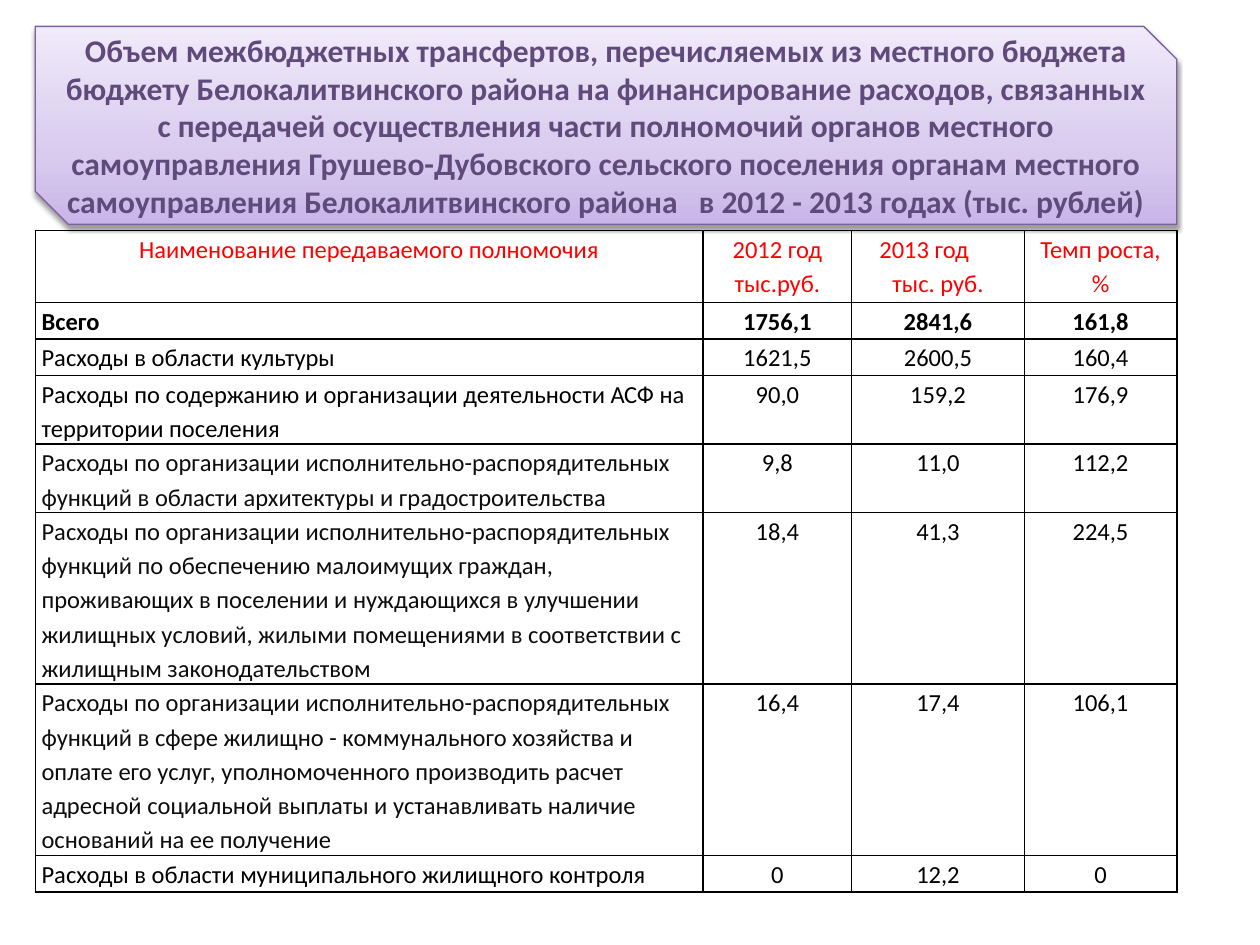
from lxml import etree
from pptx import Presentation
from pptx.dml.color import RGBColor
from pptx.enum.shapes import MSO_SHAPE
from pptx.enum.text import MSO_ANCHOR, PP_ALIGN
from pptx.oxml import parse_xml
from pptx.oxml.ns import qn
from pptx.util import Inches, Pt

BANNER = MSO_SHAPE.SNIP_2_DIAG_RECTANGLE
MIDDLE = MSO_ANCHOR.MIDDLE
LEFT, CENTER = PP_ALIGN.LEFT, PP_ALIGN.CENTER
NAMESPACE = 'xmlns:a="http://schemas.openxmlformats.org/drawingml/2006/main"'
RED, BLACK, DARK, PURPLE = "FF0000", "000000", "0D0D0D", "604A7B"
LEFT_EDGE, WIDTH = 0.28, 9.06


def color(value):
    return RGBColor.from_string(value)


def add_text(paragraph, text, size, text_color, bold, align):
    paragraph.alignment = align
    run = paragraph.add_run()
    run.text = text
    run.font.name = "Calibri"
    run.font.size = Pt(size)
    run.font.bold = bold
    run.font.color.rgb = color(text_color)


presentation = Presentation()
presentation.slide_width = Inches(10)
presentation.slide_height = Inches(7.5)
slide = presentation.slides.add_slide(presentation.slide_layouts[6])

# Table of transferred powers: name, 2012, 2013, growth
column_widths = [5.3, 1.18, 1.37, 1.21]
row_heights = [0.57, 0.29, 0.29, 0.47, 0.47, 1.19, 1.19, 0.29]
rows = [
    ("Наименование передаваемого полномочия", "2012 год тыс.руб.",
     "2013 год      тыс. руб.", "Темп роста, %"),
    ("Всего", "1756,1", "2841,6", "161,8"),
    ("Расходы в области культуры", "1621,5", "2600,5", "160,4"),
    ("Расходы по содержанию и организации деятельности АСФ на территории поселения",
     "90,0", "159,2", "176,9"),
    ("Расходы по организации исполнительно-распорядительных функций в области "
     "архитектуры и градостроительства", "9,8", "11,0", "112,2"),
    ("Расходы по организации исполнительно-распорядительных функций по обеспечению "
     "малоимущих граждан, проживающих в поселении и нуждающихся в улучшении жилищных "
     "условий, жилыми помещениями в соответствии с жилищным законодательством",
     "18,4", "41,3", "224,5"),
    ("Расходы по организации исполнительно-распорядительных функций в сфере жилищно - "
     "коммунального хозяйства и оплате его услуг, уполномоченного производить расчет "
     "адресной социальной выплаты и устанавливать наличие оснований на ее получение",
     "16,4", "17,4", "106,1"),
    ("Расходы в области муниципального жилищного контроля", "0", "12,2", "0"),
]
HEADER_ROW, TOTAL_ROW, DARK_ROWS = 0, 1, (4, 5, 6)

table = slide.shapes.add_table(
    len(rows), len(column_widths), Inches(LEFT_EDGE), Inches(1.83),
    Inches(WIDTH), Inches(sum(row_heights))).table
table.first_row = False
table.horz_banding = False
for column, width in zip(table.columns, column_widths):
    column.width = Inches(width)
for row, height in zip(table.rows, row_heights):
    row.height = Inches(height)

for row_index, values in enumerate(rows):
    for column_index, value in enumerate(values):
        cell = table.cell(row_index, column_index)
        cell.margin_left = cell.margin_right = Inches(0.05)
        cell.margin_top = cell.margin_bottom = Inches(0)
        is_name = column_index == 0
        if row_index == HEADER_ROW:
            text_color = RED
        else:
            text_color = DARK if is_name and row_index in DARK_ROWS else BLACK
        align = LEFT if is_name and row_index != HEADER_ROW else CENTER
        paragraph = cell.text_frame.paragraphs[0]
        paragraph.line_spacing = 1.15
        add_text(paragraph, value, 14, text_color, row_index == TOTAL_ROW, align)

        # Borders come before the fill in the cell properties
        properties = cell._tc.get_or_add_tcPr()
        for side in ("lnL", "lnR", "lnT", "lnB"):
            border = etree.SubElement(properties, qn(f"a:{side}"), w=str(Pt(1)))
            border_fill = etree.SubElement(border, qn("a:solidFill"))
            etree.SubElement(border_fill, qn("a:srgbClr"), val=BLACK)
        cell.fill.background()

# Title banner
banner = slide.shapes.add_shape(
    BANNER, Inches(LEFT_EDGE), Inches(0.21), Inches(WIDTH), Inches(1.57))
banner.line.color.rgb = color("7D60A0")
banner.line.width = Pt(0.75)

# Three-stop gradient rising from the bottom edge
gradient_stops = [(0, "C9B5E8"), (35, "D8CBEE"), (100, "F0EAF9")]
stops = "".join(
    f'<a:gs pos="{position * 1000}"><a:srgbClr val="{value}"/></a:gs>'
    for position, value in gradient_stops)
banner_properties = banner._element.spPr
banner_properties.find(qn("a:prstGeom")).addnext(parse_xml(
    f'<a:gradFill {NAMESPACE} rotWithShape="1"><a:gsLst>{stops}</a:gsLst>'
    '<a:lin ang="16200000" scaled="0"/></a:gradFill>'))

# Soft shadow below the banner
banner.shadow.inherit = False
banner_properties.find(qn("a:effectLst")).append(parse_xml(
    f'<a:outerShdw {NAMESPACE} blurRad="{Pt(3.1)}" dist="{Pt(1.6)}" dir="5400000" '
    f'rotWithShape="0"><a:srgbClr val="{BLACK}"><a:alpha val="38000"/></a:srgbClr>'
    '</a:outerShdw>'))

text_frame = banner.text_frame
text_frame.word_wrap = True
text_frame.vertical_anchor = MIDDLE
add_text(
    text_frame.paragraphs[0],
    "Объем межбюджетных трансфертов, перечисляемых из местного бюджета бюджету "
    "Белокалитвинского района на финансирование расходов, связанных с передачей "
    "осуществления части полномочий органов местного самоуправления "
    "Грушево-Дубовского сельского поселения органам местного самоуправления "
    "Белокалитвинского района   в 2012 - 2013 годах (тыс. рублей)",
    18, PURPLE, True, CENTER)

presentation.save("out.pptx")
